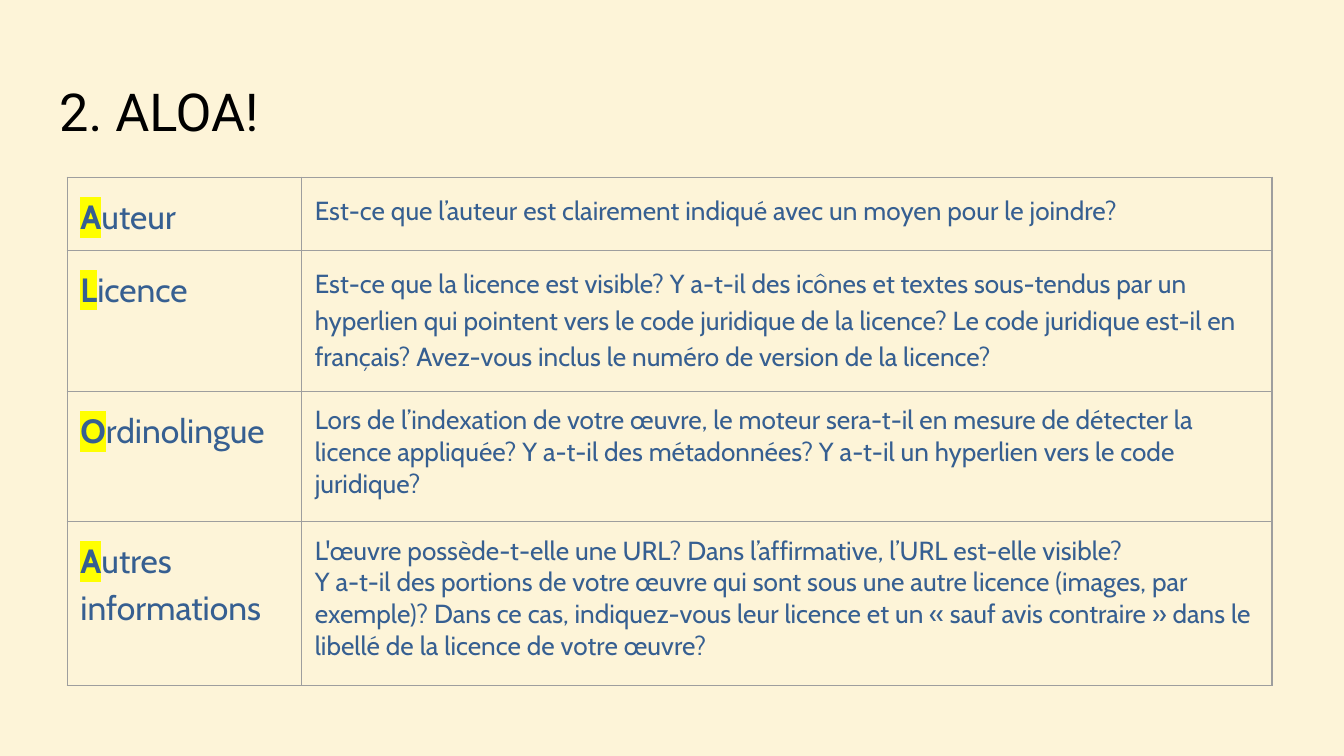
from lxml.etree import SubElement
from pptx import Presentation
from pptx.dml.color import RGBColor
from pptx.oxml.ns import qn
from pptx.util import Cm, Pt

BLUE = "365F91"
ROWS = [
    ("A", "uteur", 1.15, 1.38,
     ["Est-ce que l’auteur est clairement indiqué avec un moyen pour le joindre?"]),
    ("L", "icence", 1.15, 2.67,
     ["Est-ce que la licence est visible? Y a-t-il des icônes et textes sous-tendus "
      "par un hyperlien qui pointent vers le code juridique de la licence? Le code "
      "juridique est-il en français? Avez-vous inclus le numéro de version de la licence?"]),
    ("O", "rdinolingue", 1, 2.46,
     ["Lors de l’indexation de votre œuvre, le moteur sera-t-il en mesure de détecter "
      "la licence appliquée? Y a-t-il des métadonnées? Y a-t-il un hyperlien vers le "
      "code juridique?"]),
    ("A", "utres informations", 1, 3.1,
     ["L'œuvre possède-t-elle une URL? Dans l’affirmative, l’URL est-elle visible?",
      "Y a-t-il des portions de votre œuvre qui sont sous une autre licence (images, "
      "par exemple)? Dans ce cas, indiquez-vous leur licence et un « sauf avis "
      "contraire » dans le libellé de la licence de votre œuvre?"]),
]


def rgb(color):
    return RGBColor.from_string(color)


def add_run(p, text, size, font, color, bold=False, highlight=None):
    r = p.add_run()
    r.text = text
    r.font.size = Pt(size)
    r.font.bold = bold
    r.font.color.rgb = rgb(color)
    r.font.name = font
    if highlight:
        rPr = r.font._element
        hl = SubElement(rPr, qn("a:highlight"))
        SubElement(hl, qn("a:srgbClr"), val=highlight)
        rPr.find(qn("a:solidFill")).addnext(hl)


def set_inset(box):
    box.margin_left = box.margin_right = Cm(0.25)
    box.margin_top = box.margin_bottom = Cm(0.25)


def style_cell(cell):
    set_inset(cell)
    cell.fill.background()
    tcPr = cell._tc.get_or_add_tcPr()
    for i, side in enumerate("LRTB"):
        ln = SubElement(tcPr, qn(f"a:ln{side}"), w=str(Pt(0.75)))
        fill = SubElement(ln, qn("a:solidFill"))
        SubElement(fill, qn("a:srgbClr"), val="9E9E9E")
        tcPr.insert(i, ln)


def add_title(s, x, y, w, h):
    tf = s.shapes.add_textbox(Cm(x), Cm(y), Cm(w), Cm(h)).text_frame
    tf.word_wrap = True
    set_inset(tf)
    add_run(tf.paragraphs[0], "2. ALOA!", 28, "Roboto", "000000")


def add_criteria(s, x, y, w, label_w):
    h = sum(row[3] for row in ROWS)
    table = s.shapes.add_table(len(ROWS), 2, Cm(x), Cm(y), Cm(w), Cm(h)).table
    table.first_row = table.horz_banding = False
    table.columns[0].width = Cm(label_w)
    table.columns[1].width = Cm(w - label_w)
    for i, (initial, rest, spacing, row_h, questions) in enumerate(ROWS):
        table.rows[i].height = Cm(row_h)
        label, detail = table.cell(i, 0), table.cell(i, 1)
        style_cell(label)
        style_cell(detail)
        p = label.text_frame.paragraphs[0]
        p.line_spacing = 1.15
        add_run(p, initial, 18, "Cabin", BLUE, True, "FFFF00")
        add_run(p, rest, 18, "Cabin", BLUE)
        tf = detail.text_frame
        for j, question in enumerate(questions):
            p = tf.add_paragraph() if j else tf.paragraphs[0]
            p.line_spacing = float(spacing)
            add_run(p, question, 14, "Cabin", BLUE)


def main():
    prs = Presentation()
    prs.slide_width, prs.slide_height = Cm(25.4), Cm(14.29)
    s = prs.slides.add_slide(prs.slide_layouts[6])
    s.background.fill.solid()
    s.background.fill.fore_color.rgb = rgb("FDF4D8")
    add_title(s, 0.87, 1.24, 23.67, 1.6)
    add_criteria(s, 1.27, 3.35, 22.77, 4.43)
    prs.save("out.pptx")


if __name__ == "__main__":
    main()
